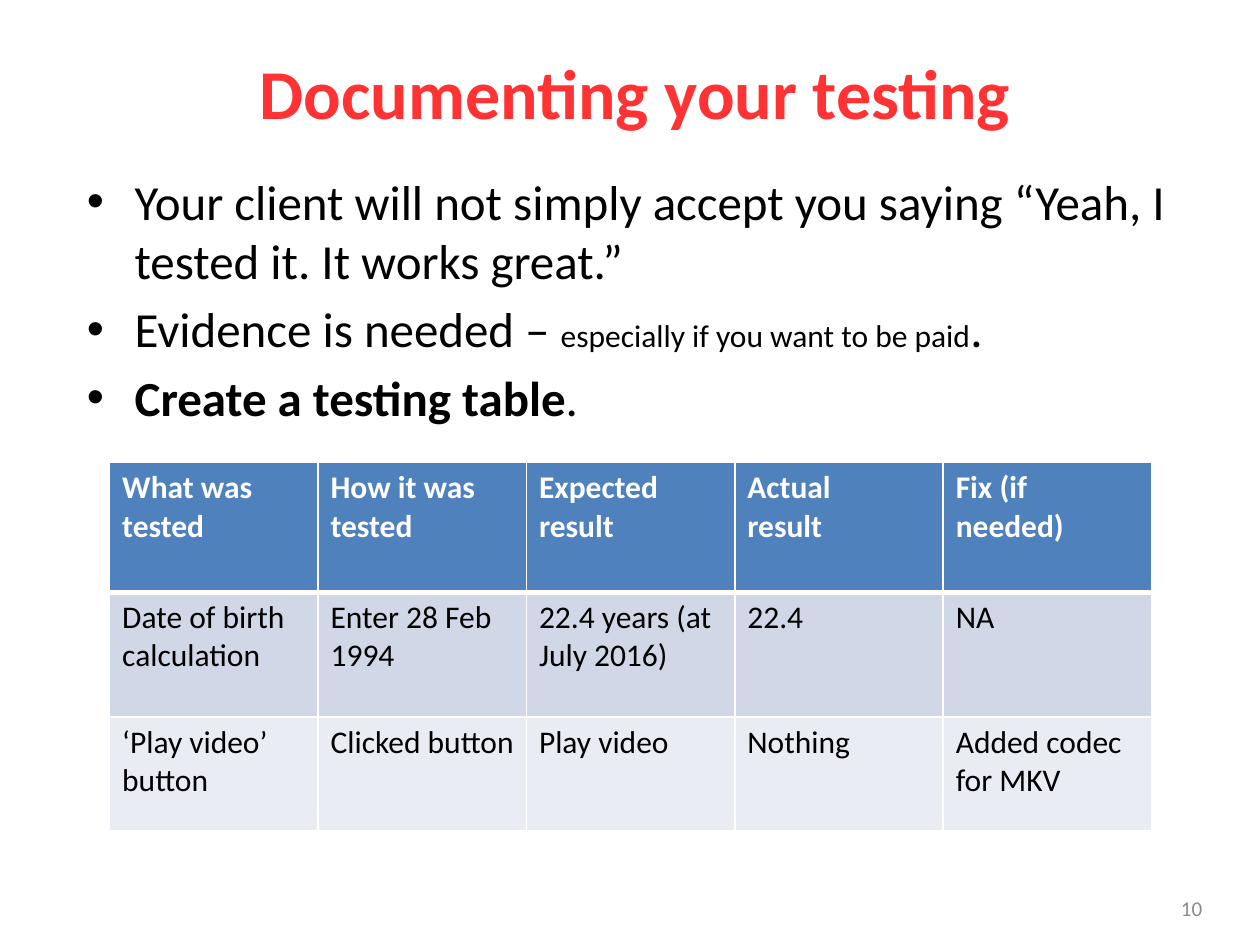
import pptx
import pptx.util
import pptx.dml.color
import pptx.enum.text
import pptx.oxml.ns
import lxml.etree

Inches = pptx.util.Inches
Pt = pptx.util.Pt
Align = pptx.enum.text.PP_ALIGN
Anchor = pptx.enum.text.MSO_ANCHOR
qn = pptx.oxml.ns.qn

BULLETS = [
    [("Your client will not simply accept you saying “Yeah, I tested it. It works great.”", 28, False)],
    [("Evidence is needed – ", 28, False), ("especially if you want to be paid", 18, False), (".", 28, False)],
    [("Create a testing table", 28, True), (".", 28, False)],
]
ROWS = [
    ["What was tested", "How it was tested", "Expected result", "Actual\nresult", "Fix (if needed)"],
    ["Date of birth calculation", "Enter 28 Feb 1994", "22.4 years (at July 2016)", "22.4", "NA"],
    ["‘Play video’ button", "Clicked button", "Play video", "Nothing", "Added codec for MKV"],
]
ROW_HEIGHTS = [1.03, 0.99, 0.9]
ROW_FILLS = ["4F81BD", "D0D8E7", "E9ECF3"]


def rgb(value):
    return pptx.dml.color.RGBColor.from_string(value)


def add_run(p, text, size, color, bold=False):
    r = p.add_run()
    r.text = text
    r.font.name = "Calibri"
    r.font.size = Pt(size)
    r.font.bold = bold
    r.font.color.rgb = rgb(color)


def add_text_box(s, box, anchor=Anchor.TOP):
    tf = s.shapes.add_textbox(*(Inches(v) for v in box)).text_frame
    tf.word_wrap = True
    tf.vertical_anchor = anchor
    return tf


def add_line(s, box, text, size, color, align, bold=False):
    p = add_text_box(s, box, Anchor.MIDDLE).paragraphs[0]
    p.alignment = align
    add_run(p, text, size, color, bold)


def set_bullet(p):
    pPr = p._p.get_or_add_pPr()
    pPr.set("marL", str(Inches(0.38)))
    pPr.set("indent", str(-Inches(0.38)))
    lxml.etree.SubElement(pPr, qn("a:buFont")).set("typeface", "Arial")
    lxml.etree.SubElement(pPr, qn("a:buChar")).set("char", "•")


def add_bullets(s, box, items):
    tf = add_text_box(s, box)
    for i, runs in enumerate(items):
        p = tf.paragraphs[0] if i == 0 else tf.add_paragraph()
        p.space_before = Pt(5.6)
        set_bullet(p)
        for text, size, bold in runs:
            add_run(p, text, size, "000000", bold)


def set_border(cell, side, color, width):
    ln = lxml.etree.SubElement(cell._tc.get_or_add_tcPr(), qn("a:ln" + side))
    ln.set("w", str(Pt(width)))
    fill = lxml.etree.SubElement(ln, qn("a:solidFill"))
    lxml.etree.SubElement(fill, qn("a:srgbClr")).set("val", color)


def fill_cell(cell, text, fill, color, bold, widths):
    for side, width in widths.items():
        set_border(cell, side, "FFFFFF", width)
    cell.fill.solid()
    cell.fill.fore_color.rgb = rgb(fill)
    tf = cell.text_frame
    for i, line in enumerate(text.split("\n")):
        p = tf.paragraphs[0] if i == 0 else tf.add_paragraph()
        add_run(p, line, 18, color, bold)


def add_testing_table(s, box, rows):
    frame = s.shapes.add_table(len(rows), len(rows[0]), *(Inches(v) for v in box))
    table = frame.table
    for column in table.columns:
        column.width = Inches(box[2] / len(rows[0]))
    for i, texts in enumerate(rows):
        table.rows[i].height = Inches(ROW_HEIGHTS[i])
        header = i == 0
        widths = {"L": 0.96, "R": 0.96, "T": 3 if i == 1 else 0.96, "B": 3 if header else 0.96}
        color = "FFFFFF" if header else "000000"
        for j, text in enumerate(texts):
            fill_cell(table.cell(i, j), text, ROW_FILLS[i], color, header, widths)


def main():
    prs = pptx.Presentation()
    prs.slide_width = Inches(10)
    prs.slide_height = Inches(7.5)
    s = prs.slides.add_slide(prs.slide_layouts[6])
    add_line(s, (0.2, 0.3, 9.68, 0.85), "Documenting your testing", 40, "FF3333", Align.CENTER, True)
    add_bullets(s, (0.59, 1.31, 8.91, 2.2), BULLETS)
    add_line(s, (9.17, 7.06, 0.47, 0.29), "10", 12, "8B8B8B", Align.RIGHT)
    add_testing_table(s, (0.87, 3.67, 8.27, sum(ROW_HEIGHTS)), ROWS)
    prs.save("out.pptx")


if __name__ == "__main__":
    main()
